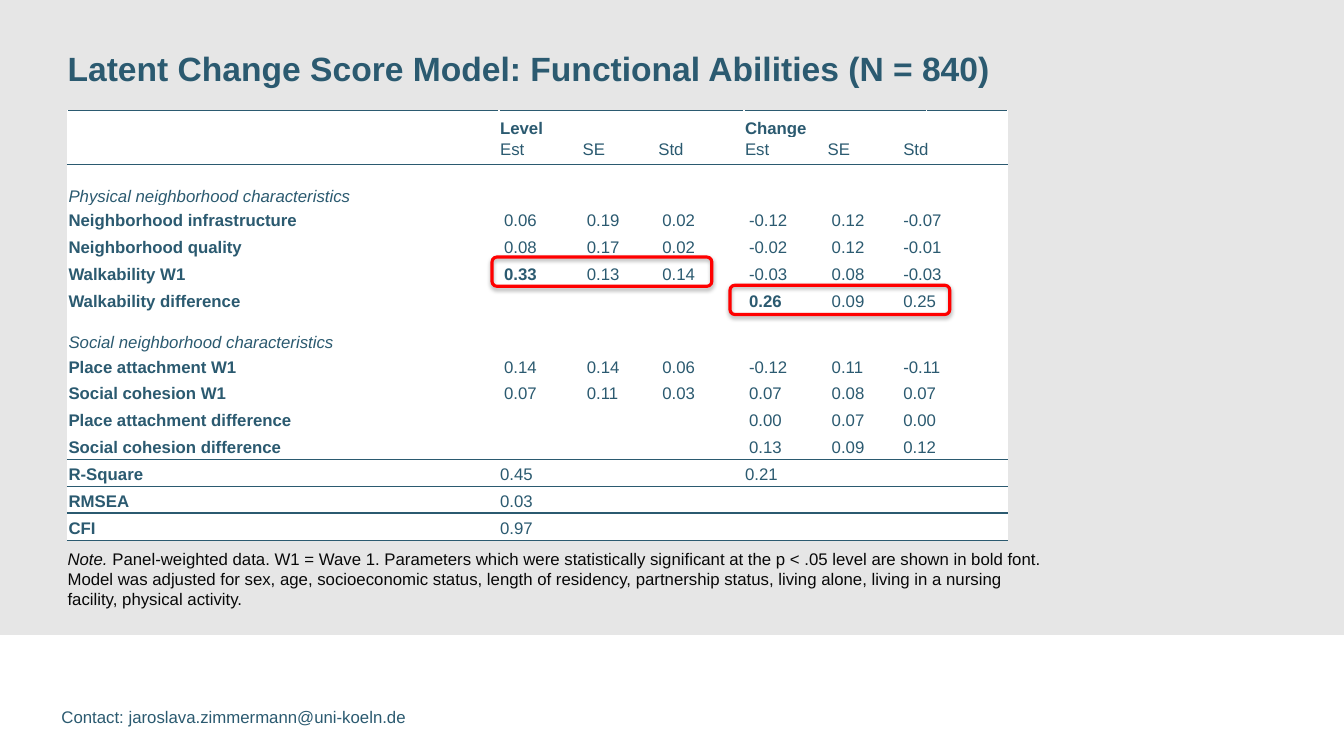
from dataclasses import dataclass

from lxml import etree
from pptx import Presentation
from pptx import util as u
from pptx.dml.color import RGBColor
from pptx.enum import shapes, text
from pptx.oxml import ns, parse_xml

INK, NOTE_INK, BAND, WHITE, RED = "2B5A70", "080808", "E6E6E6", "FFFFFF", "FF0000"
FONT = "Arial"
COLUMNS = (4.28, 0.82, 0.75, 0.86, 0.82, 0.75, 0.24, 0.49, 0.31)
TABLE_HEIGHT = 4.26
TIGHT, LOOSE = 0.01, 0.05
TOP, MIDDLE, BOTTOM = (text.MSO_ANCHOR.TOP, text.MSO_ANCHOR.MIDDLE,
                       text.MSO_ANCHOR.BOTTOM)


@dataclass
class Row:
    label: str
    values: tuple = ()
    kind: str = "data"
    significant: int = 0
    height: float = 0.0
    rule_below: float = 0.0


@dataclass
class Highlight:
    left: float
    top: float


ROWS = (
    Row("", ("Level", "", "", "Change"), "group"),
    Row("", ("Est", "SE", "Std") * 2, "head", rule_below=1),
    Row("Physical neighborhood characteristics", kind="section", height=0.41),
    Row("Neighborhood infrastructure", ("0.06", "0.19", "0.02", "-0.12", "0.12", "-0.07")),
    Row("Neighborhood quality", ("0.08", "0.17", "0.02", "-0.02", "0.12", "-0.01")),
    Row("Walkability W1", ("0.33", "0.13", "0.14", "-0.03", "0.08", "-0.03"), significant=1),
    Row("Walkability difference", ("", "", "", "0.26", "0.09", "0.25"), significant=4),
    Row("Social neighborhood characteristics", kind="section", height=0.39),
    Row("Place attachment W1", ("0.14", "0.14", "0.06", "-0.12", "0.11", "-0.11")),
    Row("Social cohesion W1", ("0.07", "0.11", "0.03", "0.07", "0.08", "0.07")),
    Row("Place attachment difference", ("", "", "", "0.00", "0.07", "0.00")),
    Row("Social cohesion difference", ("", "", "", "0.13", "0.09", "0.12"), rule_below=1),
    Row("R-Square", ("0.45", "", "", "0.21"), "fit", rule_below=1),
    Row("RMSEA", ("0.03",), "fit", rule_below=1.5),
    Row("CFI", ("0.97",), "fit", rule_below=1),
)
ANCHORS = {"group": BOTTOM, "head": TOP, "section": BOTTOM, "data": MIDDLE, "fit": MIDDLE}
HIGHLIGHTS = (Highlight(4.88, 2.55), Highlight(7.24, 2.83))


def color(value: str) -> RGBColor:
    return RGBColor.from_string(value)


def write(para, words: str, size: float = 12, ink: str = INK, bold: bool = False,
          italic: bool = False, spacing=None) -> None:
    if spacing:
        para.line_spacing = spacing
    span = para.add_run()
    span.text = words
    span.font.name = FONT
    span.font.size = u.Pt(size)
    span.font.bold = bold
    span.font.italic = italic
    span.font.color.rgb = color(ink)


def place(box, left: float, top: float, width: float, height: float) -> None:
    box.left, box.top = u.Inches(left), u.Inches(top)
    box.width, box.height = u.Inches(width), u.Inches(height)


def bare_frame(box):
    frame = box.text_frame
    frame.margin_left = frame.margin_right = frame.margin_top = frame.margin_bottom = 0
    frame.word_wrap = True
    frame.auto_size = text.MSO_AUTO_SIZE.NONE
    frame.vertical_anchor = TOP
    return frame


def add_text_box(page, left: float, top: float, width: float, height: float):
    return bare_frame(page.shapes.add_textbox(
        u.Inches(left), u.Inches(top), u.Inches(width), u.Inches(height)))


def add_rules(cell, above: float, below: float) -> None:
    properties = cell._tc.get_or_add_tcPr()
    sides = [(tag, width) for tag, width in (("lnT", above), ("lnB", below)) if width]
    for position, (tag, width) in enumerate(sides):
        properties.insert(position, parse_xml(
            f'<a:{tag} {ns.nsdecls("a")} w="{u.Pt(width)}"><a:solidFill>'
            f'<a:srgbClr val="{INK}"/></a:solidFill></a:{tag}>'))


def fill_cell(cell, row: Row, column: int) -> None:
    words = row.label if column == 0 else "".join(row.values[column - 1:column])
    loose = row.kind == "data" and 1 <= column <= 5
    cell.margin_left = cell.margin_right = u.Inches(LOOSE if loose else TIGHT)
    cell.margin_top = cell.margin_bottom = 0
    cell.vertical_anchor = ANCHORS[row.kind]
    cell.fill.solid()
    cell.fill.fore_color.rgb = color(WHITE)
    para = cell.text_frame.paragraphs[0]
    if words:
        bold = (row.kind == "group" or column == 0 and row.kind != "section"
                or column > 0 and column == row.significant)
        write(para, words, bold=bold, italic=row.kind == "section", spacing=1.15)
    else:
        etree.SubElement(para._p, ns.qn("a:endParaRPr"), sz="1200")


def add_results(page) -> None:
    table = page.shapes.add_table(
        len(ROWS), len(COLUMNS), u.Inches(0.67), u.Inches(1.1),
        u.Inches(sum(COLUMNS)), u.Inches(TABLE_HEIGHT)).table
    table.first_row = table.horz_banding = False
    for column, width in zip(table.columns, COLUMNS):
        column.width = u.Inches(width)
    plain_rows = sum(not row.height for row in ROWS)
    plain_height = (TABLE_HEIGHT - sum(row.height for row in ROWS)) / plain_rows
    above = 1.0
    for index, row in enumerate(ROWS):
        table.rows[index].height = u.Inches(row.height or plain_height)
        for column in range(len(COLUMNS)):
            cell = table.cell(index, column)
            fill_cell(cell, row, column)
            add_rules(cell, above, row.rule_below)
        above = row.rule_below
        merges = ((1, 3), (4, 6), (7, 8)) if row.kind == "group" else ((6, 7),)
        for first, last in merges:
            table.cell(index, first).merge(table.cell(index, last))


def add_highlight(page, mark: Highlight) -> None:
    box = page.shapes.add_shape(
        shapes.MSO_SHAPE.ROUNDED_RECTANGLE, u.Inches(mark.left), u.Inches(mark.top),
        u.Inches(2.18), u.Inches(0.29))
    box.fill.background()
    box.line.color.rgb = color(RED)
    box.line.width = u.Pt(2.25)
    box._element.spPr.append(parse_xml(
        f'<a:effectLst {ns.nsdecls("a")}><a:outerShdw blurRad="{u.Pt(3.1)}" '
        f'dist="{u.Pt(1.8)}" dir="5400000" rotWithShape="0"><a:srgbClr val="000000">'
        '<a:alpha val="35000"/></a:srgbClr></a:outerShdw></a:effectLst>'))


def add_band(page) -> None:
    band = page.shapes.add_shape(
        shapes.MSO_SHAPE.RECTANGLE, 0, 0, u.Inches(13.33), u.Inches(6.3))
    band.shadow.inherit = False
    band.fill.solid()
    band.fill.fore_color.rgb = color(BAND)
    band.line.fill.background()
    page.shapes._spTree.insert(2, band._element)


def main() -> None:
    deck = Presentation()
    deck.slide_width, deck.slide_height = u.Inches(13.33), u.Inches(7.5)
    page = deck.slides.add_slide(deck.slide_layouts[5])
    add_band(page)

    title = page.shapes.title
    place(title, 0.67, 0.51, 12.08, 0.36)
    heading = bare_frame(title).paragraphs[0]
    heading.alignment = text.PP_ALIGN.LEFT
    write(heading, "Latent Change Score Model: Functional Abilities (N = 840)",
          size=24, bold=True, spacing=u.Pt(26))

    add_results(page)

    note = add_text_box(page, 0.67, 5.44, 9.75, 0.61)
    write(note.paragraphs[0], "Note. ", ink=NOTE_INK, italic=True)
    write(note.paragraphs[0], "Panel-weighted data. W1 = Wave 1. Parameters which were "
          "statistically significant at the p < .05 level are shown in bold font.",
          ink=NOTE_INK)
    write(note.add_paragraph(), "Model was adjusted for sex, age, socioeconomic status, "
          "length of residency, partnership status, living alone, living in a nursing "
          "facility, physical activity.", ink=NOTE_INK)

    for mark in HIGHLIGHTS:
        add_highlight(page, mark)

    contact = add_text_box(page, 0.61, 7.03, 3.5, 0.18)
    write(contact.paragraphs[0], "Contact: jaroslava.zimmermann@uni-koeln.de",
          spacing=u.Pt(13))
    deck.save("out.pptx")


if __name__ == "__main__":
    main()
